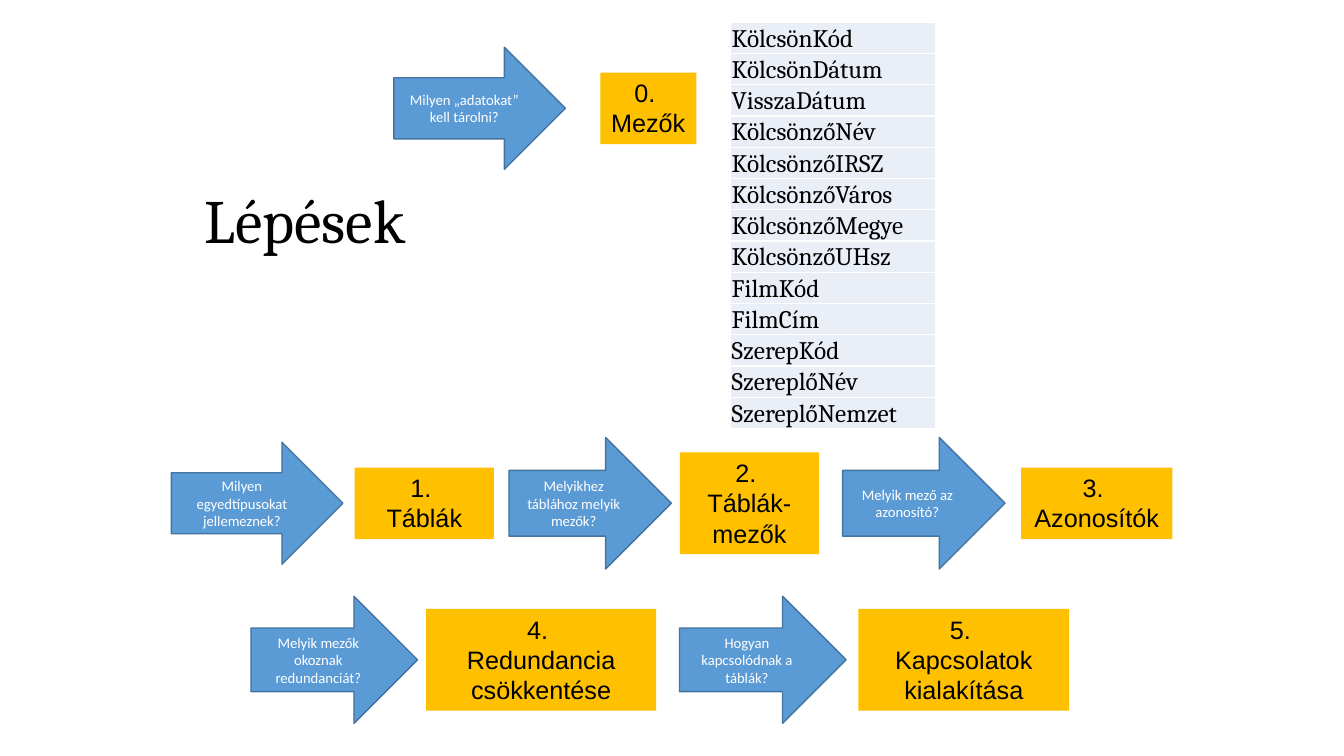
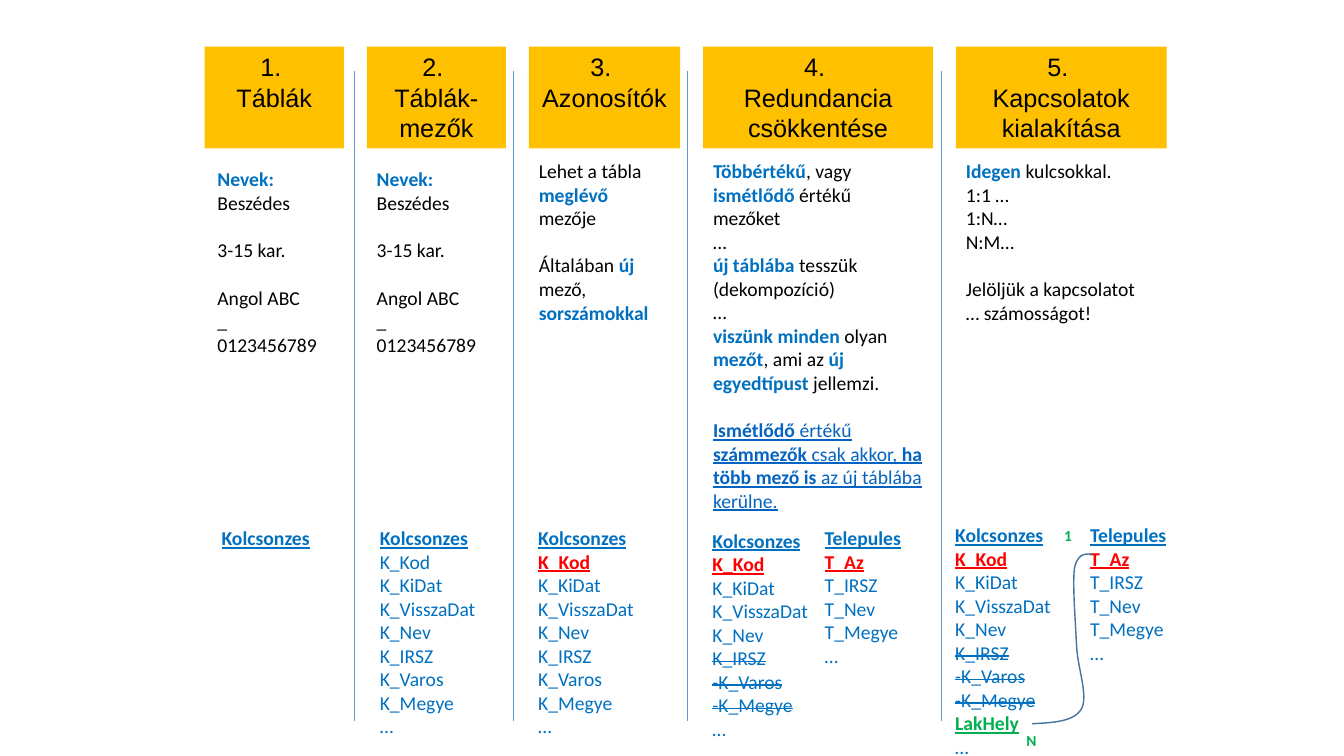
from lxml import etree
from pptx import Presentation
from pptx.dml.color import RGBColor
from pptx.enum.shapes import MSO_CONNECTOR, MSO_SHAPE
from pptx.enum.text import MSO_ANCHOR, PP_ALIGN
from pptx.oxml import parse_xml
from pptx.oxml.ns import nsdecls, qn
from pptx.util import Pt

STRAIGHT = MSO_CONNECTOR.STRAIGHT
RECTANGLE, RIGHT_ARROW = MSO_SHAPE.RECTANGLE, MSO_SHAPE.RIGHT_ARROW
TOP, MIDDLE, BOTTOM = MSO_ANCHOR.TOP, MSO_ANCHOR.MIDDLE, MSO_ANCHOR.BOTTOM
LEFT, CENTER = PP_ALIGN.LEFT, PP_ALIGN.CENTER

WIDTH, HEIGHT = 960, 540
BLACK, WHITE, GOLD, PALE = "000000", "FFFFFF", "FFC000", "EAEFF7"
ARROW, OUTLINE = "5B9BD5", "43739E"
BLUE, LINK, RED, GREEN = "0070C0", "0563C1", "FF0000", "00B050"
LINE_HEIGHT = 17

STEPS = [
    ("1. \nTáblák", 99.4),
    ("2. \nTáblák-mezők", 99.4),
    ("3. \nAzonosítók", 108),
    ("4. \nRedundancia csökkentése", 164.2),
    ("5. \nKapcsolatok kialakítása", 150.5),
]

ROW_STYLES = {
    "name": dict(colour=BLUE, bold=True, underline=True),
    "key": dict(colour=RED, bold=True, underline=True),
    "foreign": dict(colour=GREEN, bold=True, underline=True),
    "field": dict(colour=BLUE),
    "moved": dict(colour=BLUE),
}


def rgb(value):
    return RGBColor.from_string(value)


def set_font(paragraph, name="Calibri", size=14, colour=BLACK, bold=False,
             underline=False):
    font = paragraph.font
    font.name, font.size = name, Pt(size)
    font.bold, font.underline = bold, underline
    font.color.rgb = rgb(colour)


def add_paragraphs(frame, count):
    for _ in range(count - 1):
        frame.add_paragraph()
    return frame.paragraphs


def curve_points(start, segments, steps=12):
    points = [start]
    for first, second, end in segments:
        for step in range(1, steps + 1):
            t = step / steps
            weights = ((1 - t) ** 3, 3 * t * (1 - t) ** 2,
                       3 * t * t * (1 - t), t ** 3)
            corners = (start, first, second, end)
            points.append(tuple(
                sum(weight * corner[axis]
                    for weight, corner in zip(weights, corners))
                for axis in (0, 1)))
        start = end
    return [(Pt(x), Pt(y)) for x, y in points]


class Deck:
    def __init__(self):
        self.presentation = Presentation()
        self.presentation.slide_width = Pt(WIDTH)
        self.presentation.slide_height = Pt(HEIGHT)
        self.slide = None

    def new_slide(self):
        self.slide = self.presentation.slides.add_slide(
            self.presentation.slide_layouts[6])

    def text_frame(self, left, top, width, height, anchor=TOP, wrap=True):
        box = self.slide.shapes.add_textbox(
            Pt(left), Pt(top), Pt(width), Pt(height))
        frame = box.text_frame
        frame.word_wrap, frame.vertical_anchor = wrap, anchor
        return frame

    def title(self, text):
        paragraph = self.text_frame(
            139, 106, 648, 108, MIDDLE).paragraphs[0]
        paragraph.text = text
        paragraph.line_spacing = 0.9
        set_font(paragraph, "Cambria", 44)

    def shape(self, kind, left, top, width, height, text, fill, anchor,
              **font):
        shape = self.slide.shapes.add_shape(
            kind, Pt(left), Pt(top), Pt(width), Pt(height))
        shape.shadow.inherit = False
        shape.fill.solid()
        shape.fill.fore_color.rgb = rgb(fill)
        shape.line.fill.background()
        frame = shape.text_frame
        frame.word_wrap, frame.vertical_anchor = True, anchor
        lines = text.split("\n")
        for paragraph, line in zip(add_paragraphs(frame, len(lines)), lines):
            paragraph.text = line
            paragraph.alignment = CENTER
            set_font(paragraph, **font)
        return shape

    def step_box(self, left, top, width, height, label):
        self.shape(RECTANGLE, left, top, width, height, label, GOLD, TOP,
                   name="Arial", size=18)

    def question(self, left, top, width, height, text):
        arrow = self.shape(RIGHT_ARROW, left, top, width, height, text,
                           ARROW, MIDDLE, size=10.5, colour=WHITE)
        arrow.line.color.rgb = rgb(OUTLINE)
        arrow.line.width = Pt(1)

    def field_table(self, left, top, width, row_height, names):
        graphic = self.slide.shapes.add_table(
            len(names), 1, Pt(left), Pt(top), Pt(width),
            Pt(row_height * len(names)))
        table = graphic.table
        table.first_row = table.horz_banding = False
        for row, name in zip(table.rows, names):
            row.height = Pt(row_height)
            cell = row.cells[0]
            cell.margin_left = cell.margin_right = cell.margin_top = Pt(0.7)
            cell.margin_bottom = Pt(0)
            cell.vertical_anchor = BOTTOM
            properties = cell._tc.get_or_add_tcPr()
            for side in ("lnL", "lnR", "lnT", "lnB"):
                properties.append(parse_xml(
                    f'<a:{side} {nsdecls("a")} w="12700"><a:solidFill>'
                    f'<a:srgbClr val="{WHITE}"/></a:solidFill></a:{side}>'))
            cell.fill.solid()
            cell.fill.fore_color.rgb = rgb(PALE)
            paragraph = cell.text_frame.paragraphs[0]
            paragraph.text = name
            set_font(paragraph, "Cambria", 18)

    def divider(self, x):
        line = self.slide.shapes.add_connector(
            STRAIGHT, Pt(x), Pt(50.4), Pt(x), Pt(514.8))
        line.line.color.rgb = rgb(ARROW)
        line.line.width = Pt(0.5)
        etree.SubElement(line._element.spPr, qn("a:effectLst"))

    def body(self, left, top, width, height, blocks, linked=()):
        lines = [(line, index, position == 0)
                 for index, block in enumerate(blocks)
                 for position, line in enumerate(block)]
        frame = self.text_frame(left, top, width, height)
        for paragraph, (line, index, opens) in zip(
                add_paragraphs(frame, len(lines)), lines):
            is_link = index in linked
            if opens and index:
                paragraph.space_before = Pt(LINE_HEIGHT)
            set_font(paragraph, colour=LINK if is_link else BLACK,
                     underline=is_link)
            for number, part in enumerate(line.split("*")):
                if not part:
                    continue
                run = paragraph.add_run()
                run.text = part
                if number % 2:
                    run.font.bold = True
                    run.font.color.rgb = rgb(LINK if is_link else BLUE)

    def entity(self, left, top, rows):
        height = min(LINE_HEIGHT * len(rows) + 7.2, HEIGHT - top)
        frame = self.text_frame(left, top, 94.3, height)
        for paragraph, (text, style) in zip(
                add_paragraphs(frame, len(rows)), rows):
            set_font(paragraph, **ROW_STYLES[style])
            run = paragraph.add_run()
            run.text = text
            if style == "moved":
                run._r.get_or_add_rPr().set("strike", "sngStrike")

    def cardinality(self, left, top, text):
        paragraph = self.text_frame(
            left, top, 21.5, 20.8, wrap=False).paragraphs[0]
        paragraph.text = text
        set_font(paragraph, size=11, colour=GREEN, bold=True)

    def curve(self, start, segments):
        points = curve_points(start, segments)
        builder = self.slide.shapes.build_freeform(*points[0], scale=1.0)
        builder.add_line_segments(points[1:], close=False)
        shape = builder.convert_to_shape()
        shape.shadow.inherit = False
        shape.fill.background()
        shape.line.color.rgb = rgb(OUTLINE)
        shape.line.width = Pt(1)


def steps_slide(deck):
    deck.new_slide()
    deck.title("Lépések")
    first_row, second_row, third_row = (122.6, 87.2), (116, 94), (119, 90.8)
    tall, low = 72.7, 51.1
    placements = [
        (("0. \nMezők", 68.6), "Milyen „adatokat” kell tárolni?",
         281.3, first_row, 428.8, low, 77.4),
        (STEPS[0], "Milyen egyedtípusokat jellemeznek?",
         122.4, first_row, 253.4, low, 359.5),
        (STEPS[1], "Melyikhez táblához melyik mezők?",
         363.6, second_row, 485.6, tall, 359.5),
        (STEPS[2], "Melyik mező az azonosító?",
         601.9, second_row, 729.4, low, 359.5),
        (STEPS[3], "Melyik mezők okoznak redundanciát?",
         179.3, third_row, 304.4, tall, 471.3),
        (STEPS[4], "Hogyan kapcsolódnak a táblák?",
         485.4, third_row, 613.2, tall, 471.3),
    ]
    for step, question, arrow_left, arrow, left, height, middle in placements:
        label, width = step
        deck.question(arrow_left, middle - arrow[1] / 2, *arrow, question)
        deck.step_box(left, middle - height / 2, width, height, label)
    deck.field_table(522, 16, 146, 22.1, [
        "KölcsönKód", "KölcsönDátum", "VisszaDátum", "KölcsönzőNév",
        "KölcsönzőIRSZ", "KölcsönzőVáros", "KölcsönzőMegye",
        "KölcsönzőUHsz", "FilmKód", "FilmCím", "SzerepKód", "SzereplőNév",
        "SzereplőNemzet"])


def rows(style, *texts):
    return [(text, style) for text in texts]


def details_slide(deck):
    deck.new_slide()
    naming = [["*Nevek:*", "Beszédes"], ["3-15 kar."],
              ["Angol ABC", "_", "0123456789"]]
    identifiers = [["Lehet a tábla", "*meglévő* mezője"],
                   ["Általában *új* mező, *sorszámokkal*"]]
    redundancy = [
        ["*Többértékű*, vagy *ismétlődő* értékű mezőket", "…",
         "*új táblába* tesszük (dekompozíció)", "…",
         "*viszünk minden* olyan *mezőt*, ami az *új egyedtípust* jellemzi."],
        ["*Ismétlődő* értékű *számmezők* csak akkor, *ha* *több* *mező* *is*"
         " az új táblába kerülne."]]
    relations = [["*Idegen *kulcsokkal.", "1:1 …", "1:N…", "N:M…"],
                 ["Jelöljük a kapcsolatot", "… számosságot!"]]
    columns = [(naming, 116, 143), (naming, 116, 143),
               (identifiers, 110, 126), (redundancy, 110, 262),
               (relations, 110, 126)]
    left = 146.2
    for (label, width), (blocks, top, height) in zip(STEPS, columns):
        deck.step_box(left, 33.3, width, 72.7, label)
        deck.body(left + (2 if left < 150 else 0), top, width, height,
                  blocks, linked=(1,) if blocks is redundancy else ())
        left += width + 16.4
    for x in (253.4, 366.5, 491, 672.5):
        deck.divider(x)

    name, key = rows("name", "Kolcsonzes"), rows("key", "K_Kod")
    loan = rows("field", "K_KiDat", "K_VisszaDat", "K_Nev")
    address = rows("field", "K_IRSZ", "K_Varos", "K_Megye")
    moved = rows("moved", "K_IRSZ", "-K_Varos", "-K_Megye")
    more = rows("field", "…")
    town = (rows("name", "Telepules") + rows("key", "T_Az")
            + rows("field", "T_IRSZ", "T_Nev", "T_Megye") + more)
    deck.entity(151.2, 372.2, name)
    deck.entity(264.2, 372.2,
                name + rows("field", "K_Kod") + loan + address + more)
    deck.entity(377.3, 372.2, name + key + loan + address + more)
    deck.entity(501.8, 374, name + key + loan + moved + more)
    deck.entity(582, 372.2, town)
    deck.entity(675.2, 370,
                name + key + loan + moved + rows("foreign", "LakHely") + more)
    deck.entity(771.6, 370, town)
    deck.curve((780.5, 396), [
        ((775.4, 395.3), (769.7, 395.3), (767.5, 406)),
        ((766.1, 416.9), (768.2, 444.2), (769, 460.8)),
        ((769.7, 477.4), (777.6, 496.8), (772.6, 506.2)),
        ((767.5, 515.5), (752.4, 516.2), (737.3, 517))])
    deck.cardinality(753.1, 372.2, "1")
    deck.cardinality(726, 519, "N")


def main():
    deck = Deck()
    steps_slide(deck)
    details_slide(deck)
    deck.presentation.save("out.pptx")


if __name__ == "__main__":
    main()
